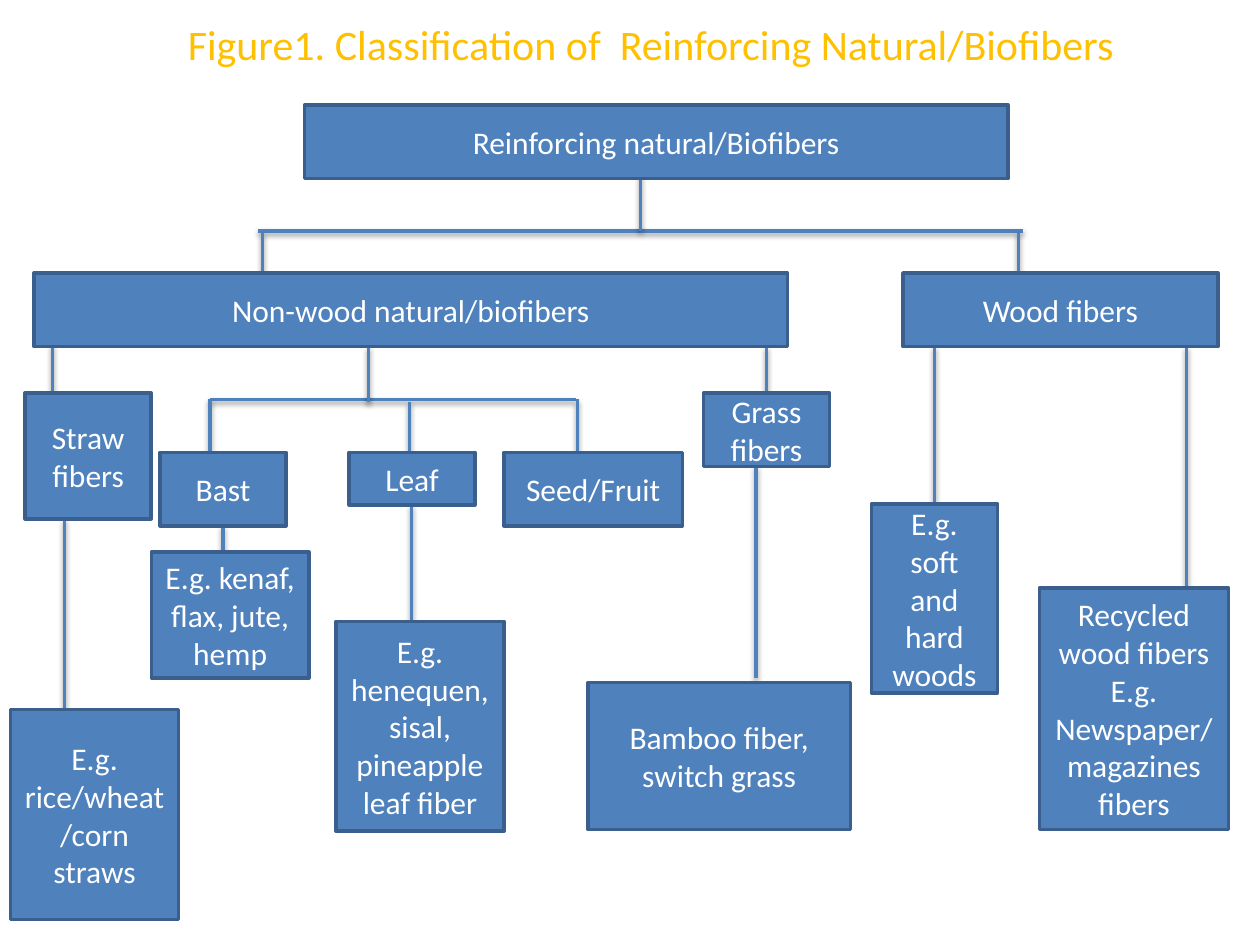
from lxml import etree
from pptx import Presentation
from pptx.dml.color import RGBColor
from pptx.enum.shapes import MSO_CONNECTOR as CONNECTOR, MSO_SHAPE as SHAPE
from pptx.enum.text import MSO_ANCHOR as ANCHOR, PP_ALIGN as ALIGN
from pptx.oxml.ns import qn
from pptx.util import Pt

BLUE = RGBColor(0x4F, 0x81, 0xBD)
DARK_BLUE = RGBColor(0x3A, 0x5F, 0x8C)
GOLD = RGBColor(0xFF, 0xC0, 0x00)
WHITE = RGBColor(0xFF, 0xFF, 0xFF)
FONT = "Calibri"
LINE_WIDTH = 2

TITLE = "Figure1. Classification of  Reinforcing Natural/Biofibers"
TITLE_PLACE = (48, 0, 648, 50.4)

# Text, left, top, width, height
BOXES = [
    ("Reinforcing natural/Biofibers", 174, 60, 402, 42),
    ("Non-wood natural/biofibers", 19.5, 156, 430.5, 42),
    ("Wood fibers", 516, 156, 180, 42),
    ("Straw fibers", 14.4, 224.5, 72, 72),
    ("Bast", 91.5, 258.5, 72, 42),
    ("Leaf", 199.5, 258.5, 72, 30),
    ("Seed/Fruit", 288, 258.5, 102, 42),
    ("Grass fibers", 402, 224.5, 72, 42),
    ("E.g. soft and hard woods", 498, 288, 72, 108),
    ("Recycled wood fibers E.g. Newspaper/magazines fibers", 594, 336, 108, 138),
    ("E.g. rice/wheat/corn straws", 6, 405.5, 96, 120),
    ("E.g. kenaf, flax, jute, hemp", 86.5, 315.5, 90, 72),
    ("E.g. henequen, sisal, pineapple leaf fiber", 192, 355, 96, 120),
    ("Bamboo fiber, switch grass", 336, 390, 150, 84),
]

# Stem x, y, left end, right end
CROSSBARS = [(366, 132, 147.5, 584.5), (210.5, 228.3, 120, 329)]

# x, top, bottom
DROPS = [
    (366, 100, 132), (150, 133, 156), (582, 133, 156),
    (30, 197, 228), (210.5, 198, 230), (438, 198, 230),
    (234, 230, 264), (120, 228.3, 262), (330, 228.3, 262),
    (534, 198, 294), (678, 198.5, 342),
    (36.8, 296.5, 405.5), (127.5, 300.5, 315.5),
    (235.3, 288.5, 412), (432, 266.5, 387.5),
]


def write_text(shape, text, *, size, color):
    frame = shape.text_frame
    frame.word_wrap = True
    frame.vertical_anchor = ANCHOR.MIDDLE
    paragraph = frame.paragraphs[0]
    paragraph.alignment = ALIGN.CENTER
    run = paragraph.add_run()
    run.text = text
    run.font.name = FONT
    run.font.size = Pt(size)
    run.font.color.rgb = color


def add_box(slide, text, *place):
    box = slide.shapes.add_shape(SHAPE.RECTANGLE, *map(Pt, place))
    box.shadow.inherit = False
    box.fill.solid()
    box.fill.fore_color.rgb = BLUE
    box.line.color.rgb = DARK_BLUE
    box.line.width = Pt(LINE_WIDTH)
    write_text(box, text, size=18, color=WHITE)


def add_line(slide, *ends):
    """Draw a straight connector with a soft shadow below it."""
    line = slide.shapes.add_connector(CONNECTOR.STRAIGHT, *map(Pt, ends))
    line.line.color.rgb = BLUE
    line.line.width = Pt(LINE_WIDTH)
    properties = line._element.spPr
    effects = etree.SubElement(properties, qn("a:effectLst"))
    shadow = etree.SubElement(
        effects, qn("a:outerShdw"), blurRad=str(Pt(3.1)), dist=str(Pt(1.6)),
        dir="5400000", rotWithShape="0")
    shade = etree.SubElement(shadow, qn("a:srgbClr"), val="000000")
    etree.SubElement(shade, qn("a:alpha"), val="38000")


def main():
    presentation = Presentation()
    presentation.slide_width, presentation.slide_height = Pt(720), Pt(540)
    slide = presentation.slides.add_slide(presentation.slide_layouts[6])

    title = slide.shapes.add_textbox(*map(Pt, TITLE_PLACE))
    write_text(title, TITLE, size=24, color=GOLD)
    for stem, y, left, right in CROSSBARS:
        for end in (left, right):
            add_line(slide, stem, y, end, y)
    for x, top, bottom in DROPS:
        add_line(slide, x, top, x, bottom)
    for box in BOXES:
        add_box(slide, *box)

    presentation.save("out.pptx")


if __name__ == "__main__":
    main()
